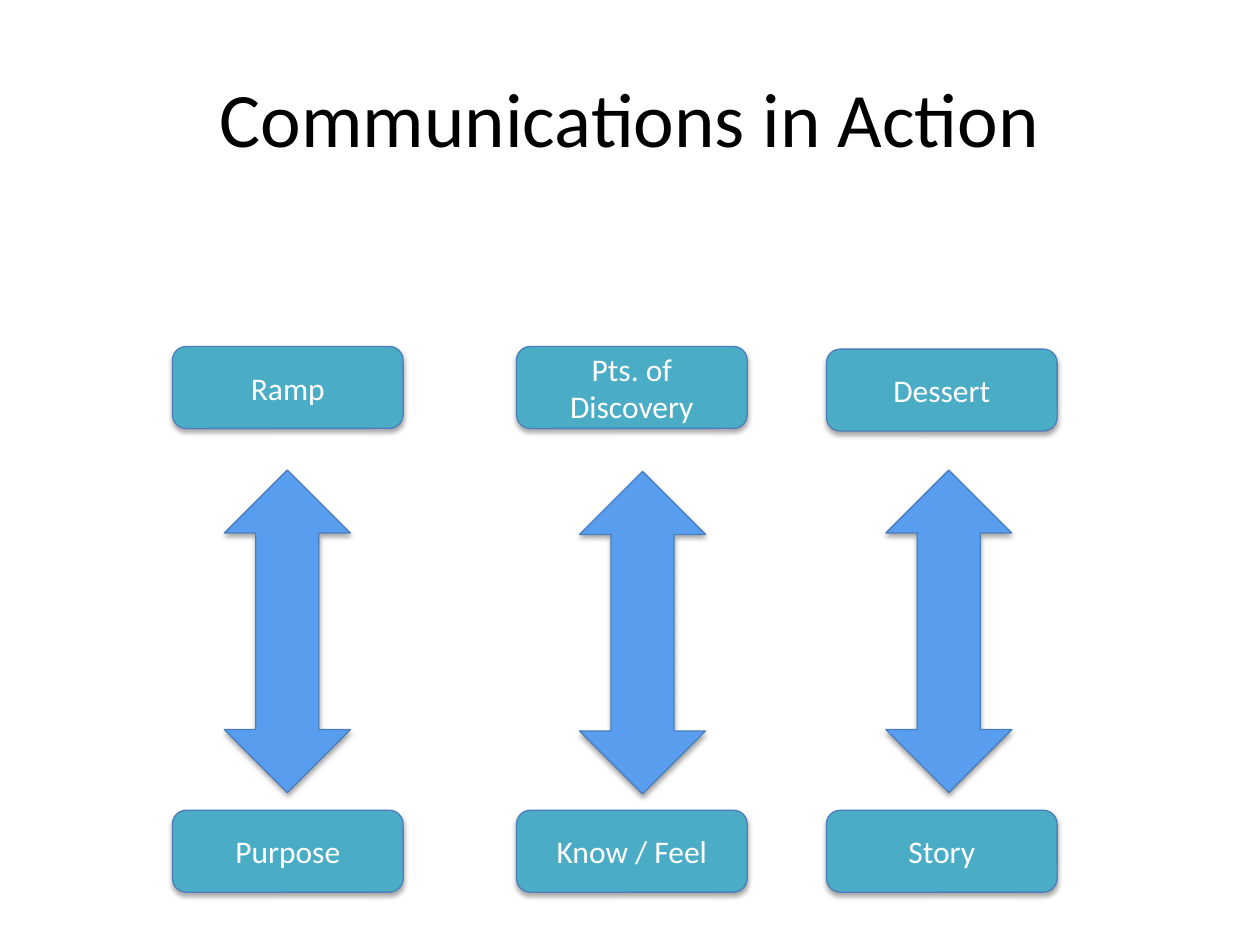
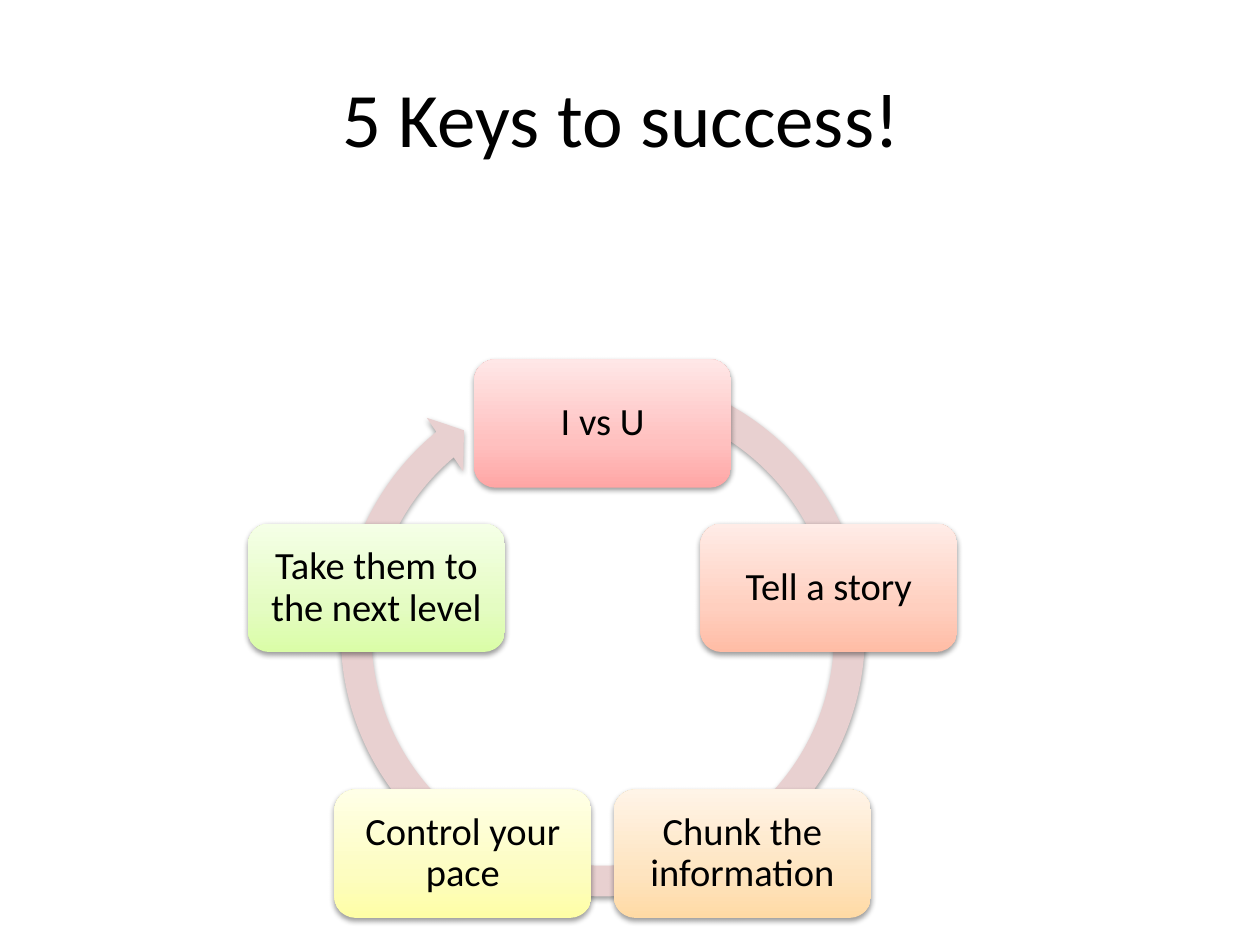
import copy
import math

import pptx
import pptx.util
from lxml import etree
from pptx.dml.color import RGBColor
from pptx.enum.shapes import MSO_SHAPE
from pptx.enum.text import MSO_ANCHOR, PP_ALIGN
from pptx.oxml.ns import qn

Pt = pptx.util.Pt

COLORS = {
    "text": "000000", "white": "FFFFFF", "box": "4BACC6",
    "arrow": "589DEE", "outline": "4B7EBC", "ring": "E8D0D0",
}
FONT = "Calibri"

# Top box, bottom box, box left, box top, arrow left, arrow top
COLUMNS = [
    ("Ramp", "Purpose", 98.6, 198, 128.2, 268.6),
    ("Pts. of Discovery", "Know / Feel", 295.2, 198, 331.2, 269.4),
    ("Dessert", "Story", 472.3, 199.5, 506.2, 268.6),
]

# Clockwise from the top; gradient runs from bottom to top
KEYS = [
    ("I vs U", ("FFA6A5", "FFC0BF", "FFE7E7")),
    ("Tell a story", ("FFBCA5", "FFCFBF", "FFECE7")),
    ("Chunk the information", ("FFDAA5", "FEE4C0", "FFF4E7")),
    ("Control your pace", ("FEFEA6", "FDFDC1", "FFFFE7")),
    ("Take them to the next level", ("DAFDA7", "E4FCC2", "F5FFE7")),
]


def rgb(color):
    return RGBColor.from_string(COLORS.get(color, color))


def write(sp, text, size=18, color="white", inset=None, spacing=None):
    """Put one centred, formatted paragraph in a shape."""
    tf = sp.text_frame
    tf.word_wrap = True
    tf.vertical_anchor = MSO_ANCHOR.MIDDLE
    if inset is not None:
        tf.margin_left = tf.margin_right = Pt(inset)
        tf.margin_top = tf.margin_bottom = Pt(inset)
    p = tf.paragraphs[0]
    p.alignment = PP_ALIGN.CENTER
    if spacing:
        p.line_spacing = spacing
    r = p.add_run()
    r.text = text
    r.font.name, r.font.size = FONT, Pt(size)
    r.font.color.rgb = rgb(color)


class Deck:
    def __init__(self):
        self.prs = pptx.Presentation()
        self.prs.slide_width, self.prs.slide_height = Pt(720), Pt(540)
        self.s = None

    def slide(self, title):
        self.s = self.prs.slides.add_slide(self.prs.slide_layouts[5])
        sp = self.s.shapes.title
        sp.left, sp.top, sp.width, sp.height = Pt(36), Pt(21.6), Pt(648), Pt(90)
        write(sp, title, size=44, color="text")

    def shape(self, kind, x, y, w, h, fill, line=None, alpha=35, dist=1.8):
        sp = self.s.shapes.add_shape(kind, Pt(x), Pt(y), Pt(w), Pt(h))
        if isinstance(fill, tuple):
            self.gradient(sp, fill)
        else:
            sp.fill.solid()
            sp.fill.fore_color.rgb = rgb(fill)
        if line:
            sp.line.color.rgb = rgb(line)
            sp.line.width = Pt(0.75)
        else:
            sp.line.fill.background()
        self.shadow(sp, alpha, dist)
        return sp

    def gradient(self, sp, colors):
        sp.fill.gradient()
        sp.fill.gradient_angle = 90
        stops = sp._element.spPr.find(".//" + qn("a:gsLst"))
        stops.insert(1, copy.deepcopy(stops[0]))
        for stop, color, position in zip(sp.fill.gradient_stops, colors, (0, 0.35, 1)):
            stop.color.rgb = rgb(color)
            stop.position = position

    def shadow(self, sp, alpha, dist):
        sp.shadow.inherit = False
        effects = sp._element.spPr.find(qn("a:effectLst"))
        outer = etree.SubElement(effects, qn("a:outerShdw"), blurRad=str(Pt(3.1)),
                                 dist=str(Pt(dist)), dir="5400000", rotWithShape="0")
        color = etree.SubElement(outer, qn("a:srgbClr"), val=COLORS["text"])
        etree.SubElement(color, qn("a:alpha"), val=str(alpha * 1000))

    def box(self, text, x, y):
        sp = self.shape(MSO_SHAPE.ROUNDED_RECTANGLE, x, y, 131.8, 46.8, "box", "outline")
        write(sp, text)

    def arrow(self, x, y):
        self.shape(MSO_SHAPE.UP_DOWN_ARROW, x, y, 72, 184.3, "arrow", "outline")

    def ring(self, x, y, size):
        sp = self.shape(MSO_SHAPE.CIRCULAR_ARROW, x, y, size, size, "ring",
                        alpha=38, dist=1.6)
        for i, value in enumerate((0.055, 3.307, 138.152, 173.621, 0.058)):
            sp.adjustments[i] = value

    def key(self, text, cx, cy, colors):
        w, h = 146.9, 73.4
        sp = self.shape(MSO_SHAPE.ROUNDED_RECTANGLE, cx - w / 2, cy - h / 2, w, h,
                        colors, alpha=38, dist=1.6)
        write(sp, text, size=22, color="text", inset=6.6, spacing=0.9)


def main():
    deck = Deck()

    # Three pairs of boxes joined by double arrows
    deck.slide("Communications in Action")
    for top, bottom, x, y, arrow_x, arrow_y in COLUMNS:
        deck.arrow(arrow_x, arrow_y)
        deck.box(top, x, y)
        deck.box(bottom, x, 463)

    # Five keys evenly spaced around a ring
    deck.slide("5 Keys to success! ")
    deck.ring(185, 203, 319)
    cx, cy, radius = 344.4, 377.9, 135.9
    for i, (text, colors) in enumerate(KEYS):
        angle = math.tau * i / len(KEYS)
        deck.key(text, cx + radius * math.sin(angle), cy - radius * math.cos(angle), colors)

    deck.prs.save("out.pptx")


if __name__ == "__main__":
    main()
